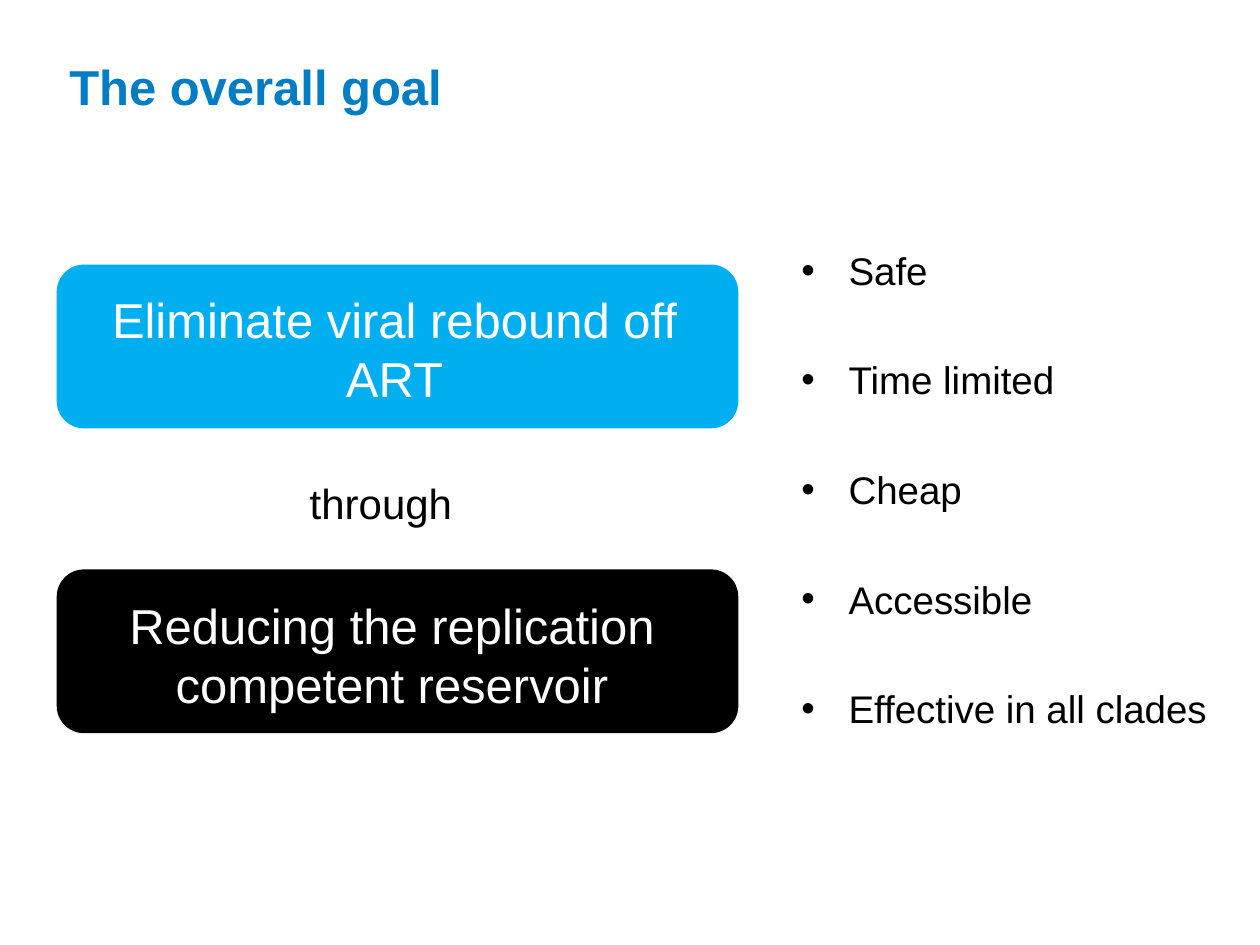
from typing import NamedTuple

from pptx import Presentation
from pptx.dml.color import RGBColor
from pptx.enum.shapes import MSO_SHAPE
from pptx.enum.text import MSO_ANCHOR, MSO_AUTO_SIZE, PP_ALIGN
from pptx.util import Pt

ROUND = MSO_SHAPE.ROUNDED_RECTANGLE
LEFT, CENTER = PP_ALIGN.LEFT, PP_ALIGN.CENTER
TOP, BOTTOM = MSO_ANCHOR.TOP, MSO_ANCHOR.BOTTOM
FIXED, GROW = MSO_AUTO_SIZE.NONE, MSO_AUTO_SIZE.SHAPE_TO_FIT_TEXT

FONT = "Arial"
BLACK, WHITE = "000000", "FFFFFF"
BLUE, CYAN = "007DC5", "01AEEF"
INDENT = 27


class Box(NamedTuple):
    left: float
    top: float
    width: float
    height: float


class Goal(NamedTuple):
    text: str
    fill: str
    panel: Box
    label: Box


GOALS = [
    Goal("Eliminate viral rebound off ART", CYAN,
         Box(32.4, 151.2, 389.5, 93.6), Box(38.2, 162, 374.4, 74.9)),
    Goal("Reducing the replication competent reservoir", BLACK,
         Box(32.4, 325.4, 389.5, 93.6), Box(49.7, 337, 348.5, 74.9)),
]
NEEDS = ["Safe", "Time limited", "Cheap", "Accessible", "Effective in all clades"]


def color(code: str) -> RGBColor:
    return RGBColor.from_string(code)


def place(shape, box: Box) -> None:
    shape.left, shape.top, shape.width, shape.height = map(Pt, box)


def style(frame, size: float, code: str, bold: bool = False, align=LEFT) -> None:
    for para in frame.paragraphs:
        para.alignment = align
        for run in para.runs:
            font = run.font
            font.name, font.size, font.bold = FONT, Pt(size), bold
            font.color.rgb = color(code)


def add_panel(slide, box: Box, fill: str) -> None:
    panel = slide.shapes.add_shape(ROUND, *map(Pt, box))
    panel.shadow.inherit = False
    panel.fill.solid()
    panel.fill.fore_color.rgb = color(fill)
    panel.line.fill.background()


def add_label(slide, text: str, box: Box, size: float, code: str,
              align=LEFT, wrap: bool = True) -> None:
    frame = slide.shapes.add_textbox(*map(Pt, box)).text_frame
    frame.text = text
    frame.word_wrap = wrap
    frame.auto_size = GROW
    style(frame, size, code, align=align)


def set_title(shape, text: str) -> None:
    place(shape, Box(32.4, 15.8, 648, 54))
    frame = shape.text_frame
    frame.text = text
    frame.vertical_anchor, frame.auto_size = BOTTOM, FIXED
    style(frame, 28, BLUE, bold=True)


def set_list(shape, items: list[str]) -> None:
    place(shape, Box(450.7, 137.5, 253.4, 300.2))
    frame = shape.text_frame
    frame.text = "\n".join(items)
    frame.vertical_anchor, frame.auto_size = TOP, FIXED
    style(frame, 22, BLACK)
    for spot, para in enumerate(frame.paragraphs):
        para.space_before = Pt(36.2 if spot else 4.4)
        props = para._p.get_or_add_pPr()
        props.set("marL", str(Pt(INDENT)))
        props.set("indent", str(-Pt(INDENT)))


def main() -> None:
    deck = Presentation()
    deck.slide_width, deck.slide_height = Pt(720), Pt(540)
    slide = deck.slides.add_slide(deck.slide_layouts[1])
    set_title(slide.shapes.title, "The overall goal")
    set_list(slide.placeholders[1], NEEDS)
    for goal in GOALS:
        add_panel(slide, goal.panel, goal.fill)
        add_label(slide, goal.text, goal.label, 28, WHITE, CENTER)
    add_label(slide, "through", Box(169.9, 269.3, 96.5, 36), 24, BLACK, wrap=False)
    deck.save("out.pptx")


if __name__ == "__main__":
    main()
